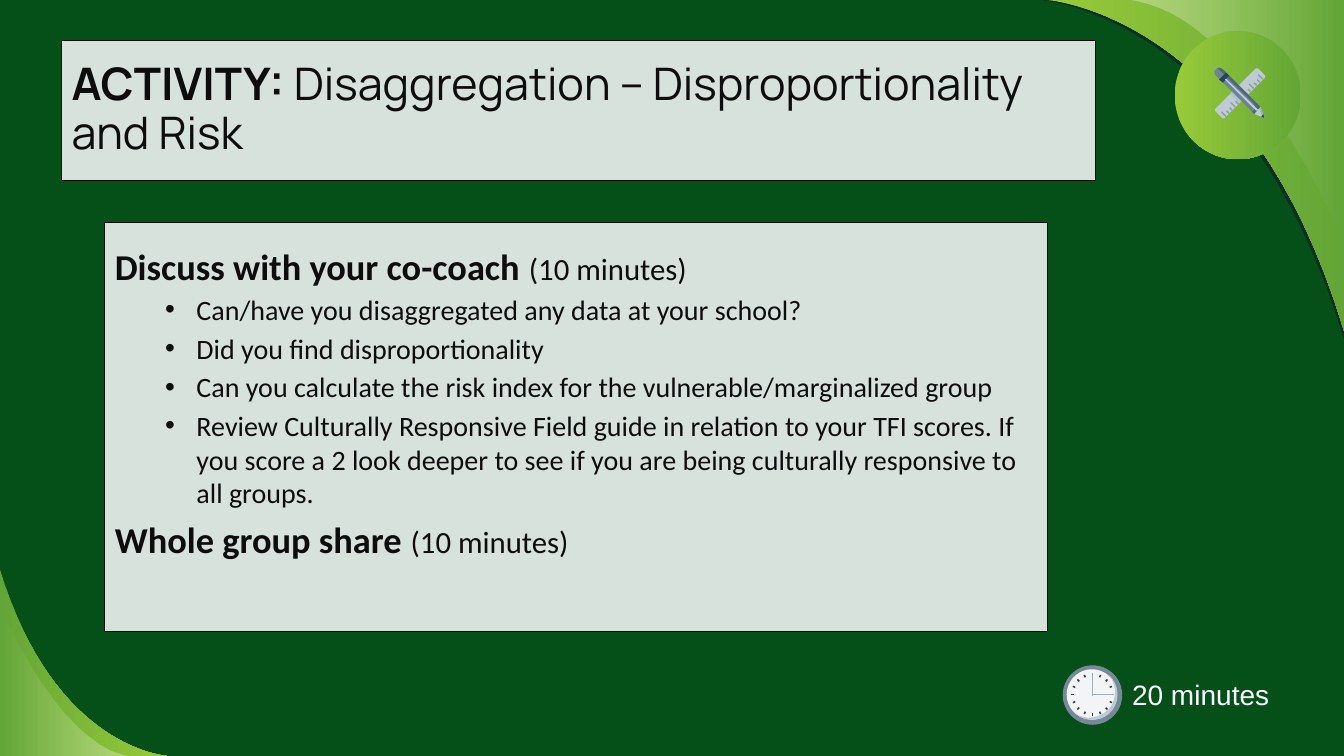
import math

from lxml import etree
from pptx import Presentation
from pptx import util as u
from pptx.dml.color import RGBColor
from pptx.enum import shapes as kinds, text
from pptx.oxml.ns import qn

INK, PANEL, LEAF, LIME = "0D0D0D", "D7E2DC", "63A537", "99CB38"
rgb = RGBColor.from_string

presentation = Presentation()
presentation.slide_width, presentation.slide_height = u.Inches(13.33), u.Inches(7.5)
slide = presentation.slides.add_slide(presentation.slide_layouts[5])
slide.background.fill.solid()
slide.background.fill.fore_color.rgb = rgb("045018")


def paint(shape, *colours, border=None):
    """Fill with one colour or a left-to-right blend; "RRGGBB/36" is 36% opaque."""
    if len(colours) == 1:
        shape.fill.solid()
        targets = [shape.fill.fore_color]
    else:
        shape.fill.gradient()
        shape.fill.gradient_angle = 0
        targets = [stop.color for stop in shape.fill.gradient_stops]
    for target, colour in zip(targets, colours):
        target.rgb = rgb(colour[:6])
    for node, colour in zip(shape._element.spPr.iter(qn("a:srgbClr")), colours):
        if "/" in colour:
            opacity = int(colour.split("/")[1]) * 1000
            etree.SubElement(node, qn("a:alpha")).set("val", str(opacity))
    if border:
        shape.line.color.rgb = rgb(border)
        shape.line.width = u.Pt(0.75)
    else:
        shape.line.fill.background()
    shape.shadow.inherit = False


def outline(start, segments, *colours):
    """Closed outline: two numbers are a corner, six a cubic curve."""
    points = [start]
    for segment in segments:
        if len(segment) == 2:
            points.append(segment)
            continue
        corners = [points[-1], segment[:2], segment[2:4], segment[4:]]
        for step in range(1, 33):
            t = step / 32
            weights = [(1 - t) ** 3, 3 * t * (1 - t) ** 2, 3 * t * t * (1 - t), t ** 3]
            points.append(tuple(sum(w * c[axis] for w, c in zip(weights, corners))
                                for axis in (0, 1)))
    points = [(u.Inches(x), u.Inches(y)) for x, y in points]
    builder = slide.shapes.build_freeform(*points[0])
    builder.add_line_segments(points[1:], close=True)
    paint(builder.convert_to_shape(), *colours)


# Corner swooshes
outline((13.33, 3.37), [(12.35, 0.11, 10.31, 0, 10.31, 0), (13.33, 0)], "12102F/54")
outline((10.38, 0), [(10.38, 0, 12.38, 0.11, 13.33, 3.28), (13.33, 0)], LIME, LEAF)
outline((13.33, 2.44), [(13.33, 2.44, 12.42, 0.15, 11.18, 0), (13.33, 0)],
        "FFFFFF/36", "FFFFFF/0")
outline((1.66, 7.5), [(1.66, 7.5, 0.54, 7.44, 0, 5.65), (0, 7.5)], LEAF, LIME)
outline((0, 6.01), [(0, 6.01, 0.56, 7.41, 1.32, 7.5), (0, 7.5)],
        "FFFFFF/0", "FFFFFF/36")

# Title
title = slide.shapes.title
title.left, title.top = u.Inches(0.61), u.Inches(0.4)
title.width, title.height = u.Inches(10.26), u.Inches(1.39)
paint(title, PANEL, border=INK)
frame = title.text_frame
frame.word_wrap = True
frame.auto_size = text.MSO_AUTO_SIZE.NONE
frame.vertical_anchor = text.MSO_ANCHOR.MIDDLE
frame.margin_left = frame.margin_right = u.Inches(0.1)
frame.margin_top = frame.margin_bottom = u.Inches(0.1)
paragraph = frame.paragraphs[0]
paragraph.alignment = text.PP_ALIGN.LEFT
paragraph.line_spacing = 0.9
paragraph.font.size = u.Pt(32)
paragraph.font.name = "Manrope"
paragraph.font.color.rgb = rgb(INK)
for words, bold in [("ACTIVITY: ", True),
                    ("Disaggregation – Disproportionality and Risk", False)]:
    run = paragraph.add_run()
    run.text, run.font.bold = words, bold

# Badge disc, ruler body and clock face
OVAL = kinds.MSO_SHAPE.OVAL
for kind, left, top, width, height, turn, colours in [
    (OVAL, 11.65, 0.31, 1.25, 1.27, 0, (LIME, LEAF)),
    (kinds.MSO_SHAPE.ROUNDED_RECTANGLE, 12, 0.86, 0.6, 0.13, -45, ("BECBD5",)),
    (OVAL, 10.54, 6.6, 0.59, 0.59, 0, ("798898",)),
    (OVAL, 10.58, 6.64, 0.5, 0.5, 0, ("F2F4F7",)),
]:
    shape = slide.shapes.add_shape(kind, u.Inches(left), u.Inches(top),
                                   u.Inches(width), u.Inches(height))
    shape.rotation = turn
    paint(shape, *colours)

# Clock rim shade
outline((11, 6.7), [(11.08, 6.8, 11.08, 6.95, 10.99, 7.04),
                    (10.94, 7.09, 10.87, 7.12, 10.81, 7.12),
                    (10.75, 7.12, 10.69, 7.1, 10.65, 7.06),
                    (10.7, 7.11, 10.76, 7.14, 10.83, 7.14),
                    (10.9, 7.14, 10.96, 7.12, 11.01, 7.07),
                    (11.11, 6.97, 11.11, 6.8, 11, 6.7)], "BCCAD6")

# Ruler ticks, clock hands and clock ticks
lines = []
for tick in range(13):
    x, y = 12.16 + 0.0304 * tick, 1.155 - 0.0308 * tick
    reach = 0.025 if tick % 3 else 0.045
    lines.append((x - reach, y - reach, x, y, "88A1B4"))
clock_x, clock_y = 10.835, 6.89
lines.append((clock_x, 6.68, clock_x, 6.9, "A3ADB8"))
lines.append((clock_x, clock_y, 11.045, clock_y, "A3ADB8"))
for tick in range(16):
    if tick not in (0, 12):  # the hands cover three and twelve o'clock
        dx, dy = math.cos(tick * math.pi / 8), math.sin(tick * math.pi / 8)
        lines.append((clock_x + 0.185 * dx, clock_y + 0.185 * dy,
                      clock_x + 0.21 * dx, clock_y + 0.21 * dy, "3D3D3D"))
for x1, y1, x2, y2, colour in lines:
    line = slide.shapes.add_connector(kinds.MSO_CONNECTOR.STRAIGHT, u.Inches(x1),
                                      u.Inches(y1), u.Inches(x2), u.Inches(y2))
    line.line.color.rgb = rgb(colour)
    line.line.width = u.Pt(1.1)
    etree.SubElement(line._element.spPr, qn("a:effectLst"))

# Ruler shade and pencil
for start, segments, colour in [
    ((12.26, 0.86), [(12.2, 0.93), (12.29, 1.02), (12.36, 0.96)], "B2C2CE"),
    ((12.09, 0.67), [(12.08, 0.67, 12.07, 0.68, 12.06, 0.69),
                     (12.04, 0.7, 12.04, 0.73, 12.06, 0.75), (12.44, 1.13),
                     (12.5, 1.06), (12.13, 0.69)], "6B8397"),
    ((12.5, 1.06), [(12.44, 1.13), (12.54, 1.17), (12.54, 1.16)], "BECBD5"),
    ((12.5, 1.06), [(12.49, 1.08), (12.52, 1.16), (12.54, 1.17)], "9FB3C2"),
    ((12.1, 0.67), [(12.08, 0.68), (12.42, 1.01),
                    (12.45, 1.04, 12.45, 1.09, 12.42, 1.11), (12.44, 1.13),
                    (12.5, 1.06), (12.13, 0.69)], "4E677C"),
    ((12.53, 1.13), [(12.51, 1.16), (12.54, 1.17)], "29435D"),
    ((12.16, 0.72), [(12.09, 0.79), (12.13, 0.82), (12.19, 0.75)], "29435D"),
    ((12.16, 0.78), [(12.15, 0.79), (12.46, 1.1), (12.48, 1.09)], "BECBD5"),
]:
    outline(start, segments, colour)

# Time label
label = slide.shapes.add_textbox(u.Inches(11.13), u.Inches(6.67),
                                 u.Inches(2.1), u.Inches(0.44))
label.text_frame.word_wrap = True
paragraph = label.text_frame.paragraphs[0]
paragraph.text = "20 minutes"
paragraph.font.size = u.Pt(20)
paragraph.font.name = "Arial"
paragraph.font.color.rgb = rgb("FFFFFF")

# Activity panel: headings carry a duration, bullets do not
panel = slide.shapes.add_shape(kinds.MSO_SHAPE.RECTANGLE, u.Inches(1.04), u.Inches(2.21),
                               u.Inches(9.35), u.Inches(4.06))
paint(panel, PANEL, border=INK)
frame = panel.text_frame
frame.word_wrap = True
frame.vertical_anchor = text.MSO_ANCHOR.TOP
frame.margin_top = u.Inches(0.21)
for index, (words, duration) in enumerate([
    ("Discuss with your co-coach ", "(10 minutes)"),
    ("Can/have you disaggregated any data at your school?", None),
    ("Did you find disproportionality", None),
    ("Can you calculate the risk index for the vulnerable/marginalized group", None),
    ("Review Culturally Responsive Field guide in relation to your TFI scores. If you "
     "score a 2 look deeper to see if you are being culturally responsive to all groups.",
     None),
    ("Whole group share ", "(10 minutes)"),
]):
    paragraph = frame.add_paragraph() if index else frame.paragraphs[0]
    paragraph.alignment = text.PP_ALIGN.LEFT
    if index:
        paragraph.space_before = u.Pt(5.2 if duration else 3.6)
    if not duration:
        paragraph.level = 1
        properties = paragraph._p.get_or_add_pPr()
        properties.set("marL", str(u.Inches(0.81)))
        properties.set("indent", str(u.Inches(-0.31)))
        etree.SubElement(properties, qn("a:buFont")).set("typeface", "Arial")
        etree.SubElement(properties, qn("a:buChar")).set("char", "•")
    paragraph.font.name = "Calibri"
    paragraph.font.color.rgb = rgb(INK)
    paragraph.font.size = u.Pt(22 if duration else 20)
    run = paragraph.add_run()
    run.text = words
    if duration:
        run.font.size, run.font.bold = u.Pt(26), True
        paragraph.add_run().text = duration

presentation.save("out.pptx")
